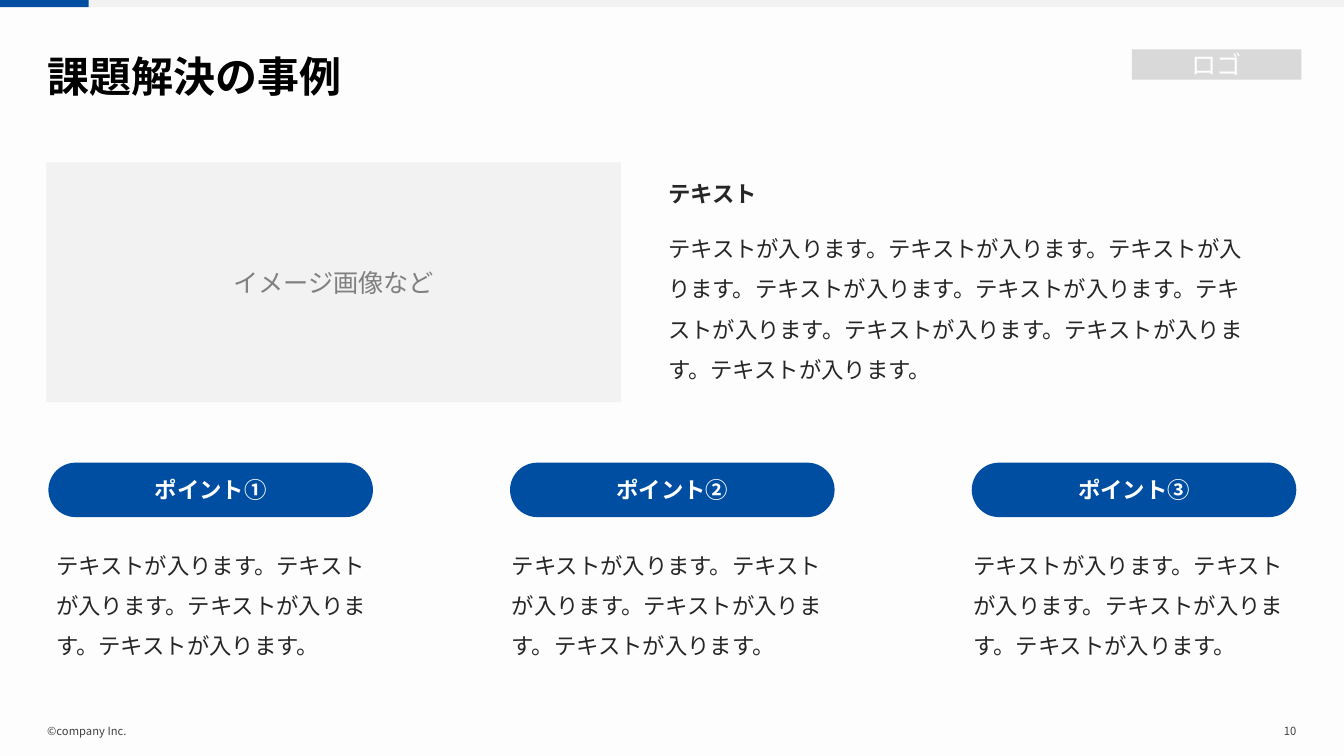
"""Build the case study slide with an image area and three points."""
from dataclasses import dataclass

from lxml import etree
from pptx import Presentation
from pptx.dml.color import RGBColor
from pptx.enum.lang import MSO_LANGUAGE_ID
from pptx.enum.shapes import MSO_SHAPE
from pptx.enum.text import MSO_ANCHOR, MSO_AUTO_SIZE, PP_ALIGN
from pptx.oxml.ns import qn
from pptx.shapes.autoshape import Shape
from pptx.slide import Slide
from pptx.util import Pt

RECT, ROUND = MSO_SHAPE.RECTANGLE, MSO_SHAPE.ROUNDED_RECTANGLE
LEFT, CENTER, RIGHT = PP_ALIGN.LEFT, PP_ALIGN.CENTER, PP_ALIGN.RIGHT
TOP, MIDDLE = MSO_ANCHOR.TOP, MSO_ANCHOR.MIDDLE
GROW, FIXED = MSO_AUTO_SIZE.SHAPE_TO_FIT_TEXT, MSO_AUTO_SIZE.NONE
JAPANESE = MSO_LANGUAGE_ID.JAPANESE


@dataclass(frozen=True)
class Theme:
    font: str = "Noto Sans CJK JP"
    blue: str = "004EA2"
    white: str = "FFFFFF"
    black: str = "000000"
    ink: str = "262626"
    note: str = "404040"
    gray: str = "808080"
    logo: str = "D9D9D9"
    pale: str = "F2F2F2"
    tint: str = "ECECEC"
    small: int = 8
    body: int = 16
    label: int = 18
    title: int = 30


THEME = Theme()


@dataclass(frozen=True)
class Area:
    left: float
    top: float
    width: float
    height: float


@dataclass(frozen=True)
class Style:
    size: int = THEME.body
    color: str = THEME.ink
    bold: bool = False
    align: PP_ALIGN = LEFT
    anchor: MSO_ANCHOR = TOP
    line: float = 1.0
    grow: bool = False


@dataclass(frozen=True)
class Panel:
    area: Area
    fill: str
    text: str = ""
    style: Style = Style()
    kind: MSO_SHAPE = RECT
    alpha: int = 100


@dataclass(frozen=True)
class Label:
    area: Area
    text: str
    style: Style


@dataclass(frozen=True)
class Point:
    mark: str
    left: float


WIDTH, HEIGHT = 960, 540
BAR = 5.76
PILL_LEFT, PILL_STEP = 34.56, 329.76
SIDE, SIDE_WIDTH = 470.16, 434.16
IMAGE_TOP = 115.92
FOOT_TOP, FOOT_HEIGHT = 515.52, 13.68
FILLER = "テキストが入ります。"

BODY = Style(line=1.5, grow=True)
HEAD = Style(bold=True, line=1.5, grow=True)
TITLE = Style(THEME.title, THEME.black, True, anchor=MIDDLE, line=0.9)
FOOT = Style(THEME.small, THEME.note, anchor=MIDDLE)
NUMBER = Style(THEME.small, THEME.note, align=RIGHT, anchor=MIDDLE)
LOGO = Style(THEME.label, THEME.white, align=CENTER, anchor=MIDDLE)
IMAGE = Style(THEME.label, THEME.gray, align=CENTER, anchor=MIDDLE)
PILL = Style(color=THEME.white, bold=True, align=CENTER, anchor=MIDDLE)

PANELS = (
    Panel(Area(0, BAR, WIDTH, HEIGHT - BAR), THEME.tint, alpha=10),
    Panel(Area(0, -0.72, WIDTH, BAR), THEME.pale),
    Panel(Area(808.56, 35.28, 120.96, 21.6), THEME.logo, "ロゴ", LOGO),
    Panel(Area(0, -0.72, 63.36, BAR), THEME.blue),
    Panel(Area(33.12, IMAGE_TOP, 410.4, 171.36), THEME.pale, "イメージ画像など", IMAGE),
)
LABELS = (
    Label(Area(892.08, FOOT_TOP, 41.04, FOOT_HEIGHT), "10", NUMBER),
    Label(Area(26.64, FOOT_TOP, 300.24, FOOT_HEIGHT), "©company Inc.", FOOT),
    Label(Area(26.64, 32.4, 713.52, 48.24), "課題解決の事例", TITLE),
    Label(Area(SIDE, IMAGE_TOP, SIDE_WIDTH, 33.84), "テキスト", HEAD),
    Label(Area(SIDE, 154.8, SIDE_WIDTH, 120.96), FILLER * 9, BODY),
)
POINTS = (Point("①", 33.12), Point("②", 358.56), Point("③", 688.32))


def place(area: Area) -> tuple[Pt, Pt, Pt, Pt]:
    """Return the area as four lengths."""
    return Pt(area.left), Pt(area.top), Pt(area.width), Pt(area.height)


def write(shape: Shape, text: str, style: Style) -> None:
    """Write one styled run into a shape."""
    frame = shape.text_frame
    frame.word_wrap = True
    frame.auto_size = GROW if style.grow else FIXED
    frame.vertical_anchor = style.anchor
    para = frame.paragraphs[0]
    para.alignment = style.align
    para.line_spacing = style.line
    run = para.add_run()
    run.text = text
    font = run.font
    font.name = THEME.font
    font.size = Pt(style.size)
    font.bold = style.bold
    font.color.rgb = RGBColor.from_string(style.color)
    font.language_id = JAPANESE
    props = run._r.get_or_add_rPr()
    etree.SubElement(props, qn("a:ea"), typeface=THEME.font)


def draw_panel(slide: Slide, panel: Panel) -> None:
    """Draw a filled shape with its text."""
    shape = slide.shapes.add_shape(panel.kind, *place(panel.area))
    shape.shadow.inherit = False
    shape.line.fill.background()
    shape.fill.solid()
    shape.fill.fore_color.rgb = RGBColor.from_string(panel.fill)
    if panel.kind == ROUND:
        shape.adjustments[0] = 0.5
    if panel.alpha < 100:
        color = shape._element.spPr.find(f"{qn('a:solidFill')}/{qn('a:srgbClr')}")
        etree.SubElement(color, qn("a:alpha"), val=str(panel.alpha * 1000))
    if panel.text:
        write(shape, panel.text, panel.style)


def draw_label(slide: Slide, label: Label) -> None:
    """Draw a text box."""
    box = slide.shapes.add_textbox(*place(label.area))
    write(box, label.text, label.style)


def draw_point(slide: Slide, index: int, point: Point) -> None:
    """Draw a pill and the text below it."""
    pill = Area(PILL_LEFT + index * PILL_STEP, 330.48, 231.84, 38.88)
    draw_panel(slide, Panel(pill, THEME.blue, f"ポイント{point.mark}", PILL, ROUND))
    draw_label(slide, Label(Area(point.left, 380.88, 242.64, 92.16), FILLER * 4, BODY))


def main() -> None:
    """Build and save the slide."""
    deck = Presentation()
    deck.slide_width, deck.slide_height = Pt(WIDTH), Pt(HEIGHT)
    slide = deck.slides.add_slide(deck.slide_layouts[6])
    back = slide.background.fill
    back.solid()
    back.fore_color.rgb = RGBColor.from_string(THEME.white)
    for panel in PANELS:
        draw_panel(slide, panel)
    for label in LABELS:
        draw_label(slide, label)
    for index, point in enumerate(POINTS):
        draw_point(slide, index, point)
    deck.save("out.pptx")


if __name__ == "__main__":
    main()
